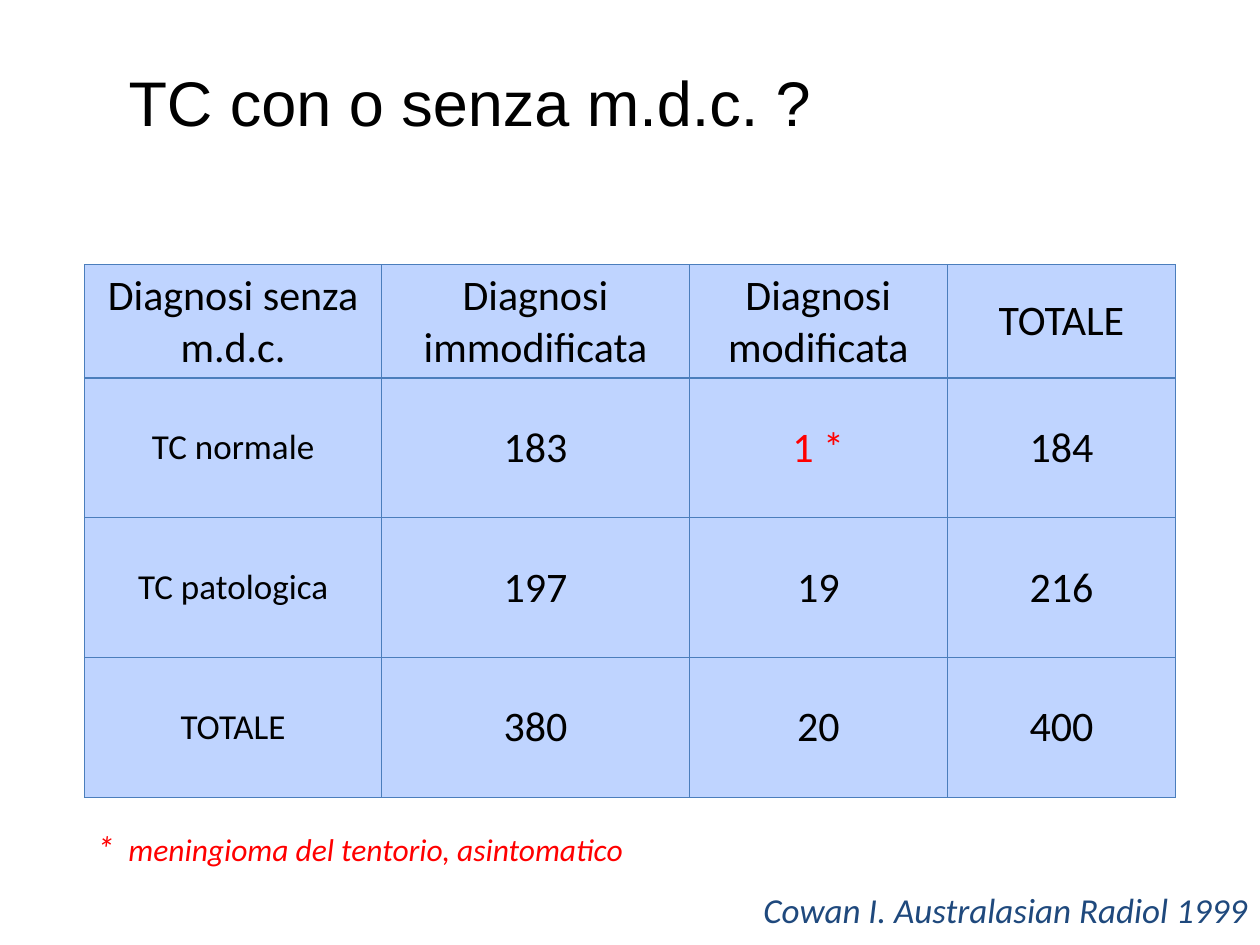
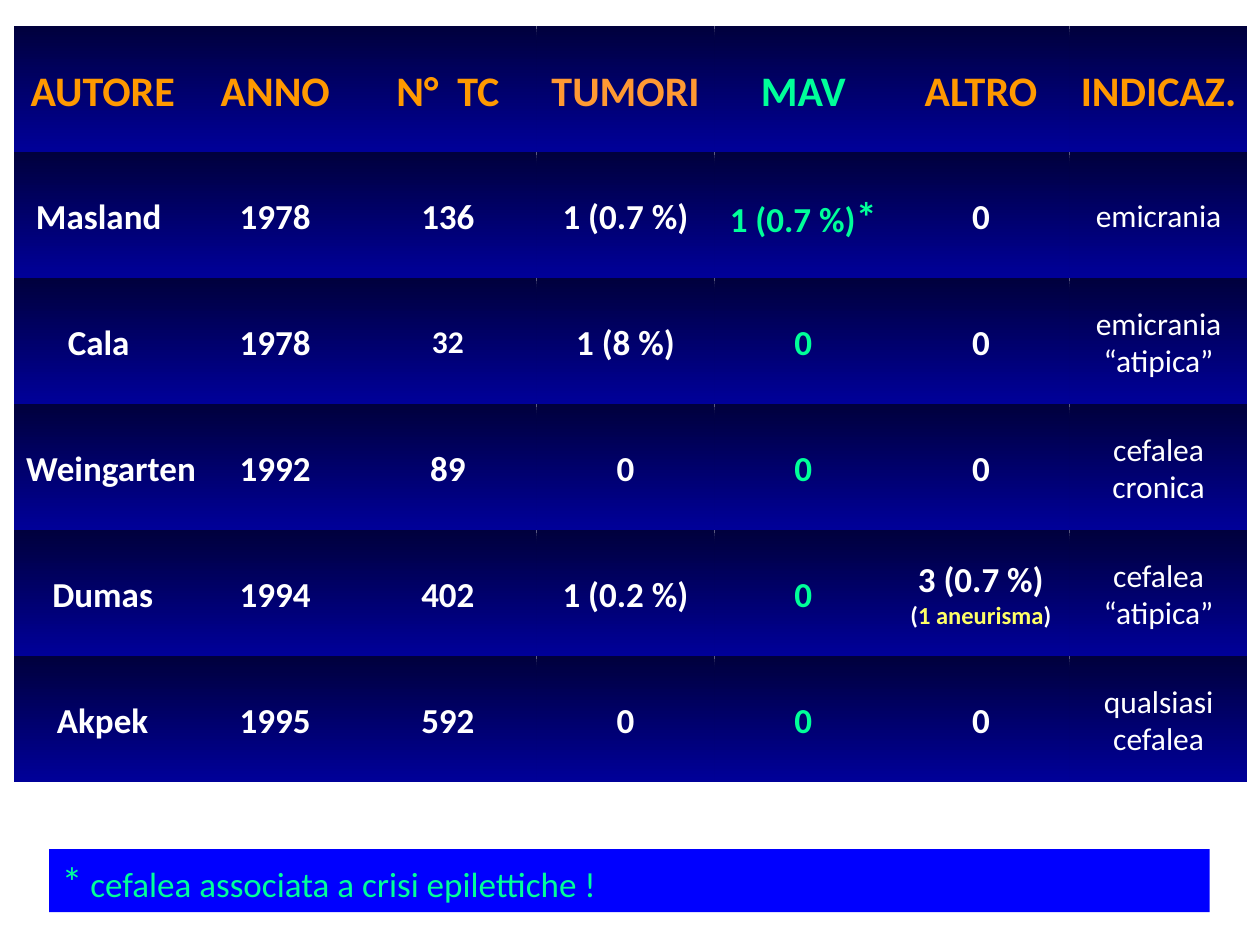
"""Build two slides on CT findings in headache: a results table and a grid of studies."""
from typing import NamedTuple

from lxml.etree import SubElement
from pptx import Presentation
from pptx.dml.color import RGBColor
from pptx.enum.shapes import MSO_SHAPE as Shape
from pptx.enum.text import MSO_ANCHOR as Anchor, PP_ALIGN as Align
from pptx.oxml.ns import qn
from pptx.util import Inches, Pt

COLORS = {
    "black": "000000", "white": "FFFFFF", "red": "FF0000", "navy": "1F497D",
    "cell": "BFD4FF", "border": "4B7EBC", "orange": "FF9900", "tumor": "FF9933",
    "mint": "00FF99", "yellow": "FFFF66", "blue": "0000FF",
    "night": "00003D", "deep": "000099",
}
BODY_FONT, TITLE_FONT = "Calibri", "Arial"


class Span(NamedTuple):
    text: str
    size: int = 20
    color: str = "white"
    bold: bool = False
    italic: bool = False
    font: str = BODY_FONT


class Box(NamedTuple):
    left: float
    top: float
    width: float
    height: float

    def lengths(self) -> list:
        return [Inches(value) for value in self]


def rgb(name: str) -> RGBColor:
    return RGBColor.from_string(COLORS[name])


def write(frame, spans: list[Span], align=Align.CENTER) -> None:
    paragraph = frame.paragraphs[0]
    paragraph.alignment = align
    for span in spans:
        for index, line in enumerate(span.text.split("\n")):
            if index:
                paragraph.add_line_break()
            if not line:
                continue
            run = paragraph.add_run()
            run.text = line
            font = run.font
            font.name, font.size = span.font, Pt(span.size)
            font.bold, font.italic = span.bold, span.italic
            font.color.rgb = rgb(span.color)


def add_note(slide, box: Box, spans: list[Span], align=Align.LEFT) -> None:
    frame = slide.shapes.add_textbox(*box.lengths()).text_frame
    frame.word_wrap = True
    write(frame, spans, align)


def add_rect(slide, box: Box):
    rect = slide.shapes.add_shape(Shape.RECTANGLE, *box.lengths())
    rect.shadow.inherit = False
    rect.line.fill.background()
    return rect


def border_cell(cell) -> None:
    properties = cell._tc.get_or_add_tcPr()
    for side in ("a:lnL", "a:lnR", "a:lnT", "a:lnB"):
        line = SubElement(properties, qn(side), w=str(Pt(0.75)))
        fill = SubElement(line, qn("a:solidFill"))
        SubElement(fill, qn("a:srgbClr"), val=COLORS["border"])


DIAGNOSES = [
    ["Diagnosi senza m.d.c.", "Diagnosi immodificata", "Diagnosi modificata", "TOTALE"],
    ["TC normale", "183", "1 *", "184"],
    ["TC patologica", "197", "19", "216"],
    ["TOTALE", "380", "20", "400"],
]
DIAGNOSIS_WIDTHS = [2.36, 2.44, 2.05, 1.81]
DIAGNOSIS_HEIGHTS = [0.9, 1.11, 1.11, 1.11]


def add_diagnosis_table(slide) -> None:
    box = Box(0.67, 2.1, sum(DIAGNOSIS_WIDTHS), sum(DIAGNOSIS_HEIGHTS))
    table = slide.shapes.add_table(
        len(DIAGNOSES), len(DIAGNOSIS_WIDTHS), *box.lengths()).table
    table.first_row = table.horz_banding = False
    for column, width in zip(table.columns, DIAGNOSIS_WIDTHS):
        column.width = Inches(width)
    for row, height in zip(table.rows, DIAGNOSIS_HEIGHTS):
        row.height = Inches(height)
    for r, values in enumerate(DIAGNOSES):
        for c, value in enumerate(values):
            cell = table.cell(r, c)
            border_cell(cell)
            cell.fill.solid()
            cell.fill.fore_color.rgb = rgb("cell")
            cell.vertical_anchor = Anchor.MIDDLE
            size = 20 if r and not c else 24
            color = "red" if "*" in value else "black"
            write(cell.text_frame, [Span(value, size, color)])


def build_contrast_slide(deck) -> None:
    slide = deck.slides.add_slide(deck.slide_layouts[5])
    title = slide.shapes.title
    title.left, title.top, title.width, title.height = Box(0.75, 0.28, 8.5, 0.94).lengths()
    frame = title.text_frame
    frame.vertical_anchor = Anchor.MIDDLE
    frame.margin_left, frame.margin_top = Inches(0.27), Inches(0.15)
    write(frame, [Span("TC con o senza m.d.c. ?", 36, "black", font=TITLE_FONT)], Align.LEFT)
    add_note(slide, Box(2.64, 7, 7.36, 0.43),
             [Span("Cowan I. Australasian Radiol 1999", 20, "navy", italic=True)], Align.RIGHT)
    add_diagnosis_table(slide)
    add_note(slide, Box(0.67, 6.51, 7.36, 0.43),
             [Span("*", 20, "red", italic=True),
              Span("  meningioma del tentorio, asintomatico", 18, "red", italic=True)])


STUDIES = [
    ["AUTORE", "ANNO", "N°  TC", "TUMORI", "MAV", "ALTRO", "INDICAZ."],
    ["Masland ", "1978", "136", "1 (0.7 %)", "1 (0.7 %)", "0", "emicrania"],
    ["Cala ", "1978", "32", "1 (8 %)", "0", "0", "emicrania\n“atipica”"],
    ["Weingarten", "1992", "89", "0", "0", "0", "cefalea\ncronica"],
    ["Dumas", "1994", "402", "1 (0.2 %)", "0", "3 (0.7 %)\n", "cefalea\n“atipica”"],
    ["Akpek", "1995", "592", "0", "0", "0", "qualsiasi\ncefalea"],
]
AUTHOR, TUMORS, AVM, OTHER, INDICATION = 0, 3, 4, 5, 6
BACK_TO_FRONT = [*range(INDICATION, AUTHOR, -1), AUTHOR]
HEADER_COLORS = {TUMORS: "tumor", AVM: "mint"}
EXTRA_SPANS = {
    (1, AVM): [Span("*", 24, "mint", True)],
    (4, OTHER): [Span("(", 14, bold=True), Span("1 aneurisma", 14, "yellow", True),
                 Span(")", 14, bold=True)],
}


def study_span(row: int, column: int, text: str) -> Span:
    if row == 0:
        return Span(text, 24, HEADER_COLORS.get(column, "orange"), True)
    if column == INDICATION:
        return Span(text, 18)
    size = 18 if text == "32" else 20
    return Span(text, size, "mint" if column == AVM else "white", True)


def add_study_cell(slide, row: int, column: int, text: str) -> None:
    left = 0.11 + 1.37 * min(column, 2) + 1.41 * max(column - 2, 0)
    cell = add_rect(slide, Box(left, 0.21 + row, 1.41, 1))
    cell.fill.gradient()
    cell.fill.gradient_angle = 270
    for stop, color in zip(cell.fill.gradient_stops, ("night", "deep")):
        stop.color.rgb = rgb(color)
    frame = cell.text_frame
    frame.word_wrap = False
    frame.vertical_anchor = Anchor.MIDDLE
    align = Align.LEFT if text == "Weingarten" else Align.CENTER
    write(frame, [study_span(row, column, text), *EXTRA_SPANS.get((row, column), [])], align)


def build_studies_slide(deck) -> None:
    slide = deck.slides.add_slide(deck.slide_layouts[6])
    for row, texts in enumerate(STUDIES):
        for column in BACK_TO_FRONT:
            add_study_cell(slide, row, column, texts[column])
    footnote = add_rect(slide, Box(0.39, 6.74, 9.21, 0.5))
    footnote.fill.solid()
    footnote.fill.fore_color.rgb = rgb("blue")
    footnote.text_frame.vertical_anchor = Anchor.TOP
    write(footnote.text_frame,
          [Span("*", 24, "mint"), Span(" cefalea associata a crisi epilettiche !", 20, "mint")],
          Align.LEFT)


def main() -> None:
    deck = Presentation()
    deck.slide_width, deck.slide_height = Inches(10), Inches(7.5)
    build_contrast_slide(deck)
    build_studies_slide(deck)
    deck.save("out.pptx")


if __name__ == "__main__":
    main()
